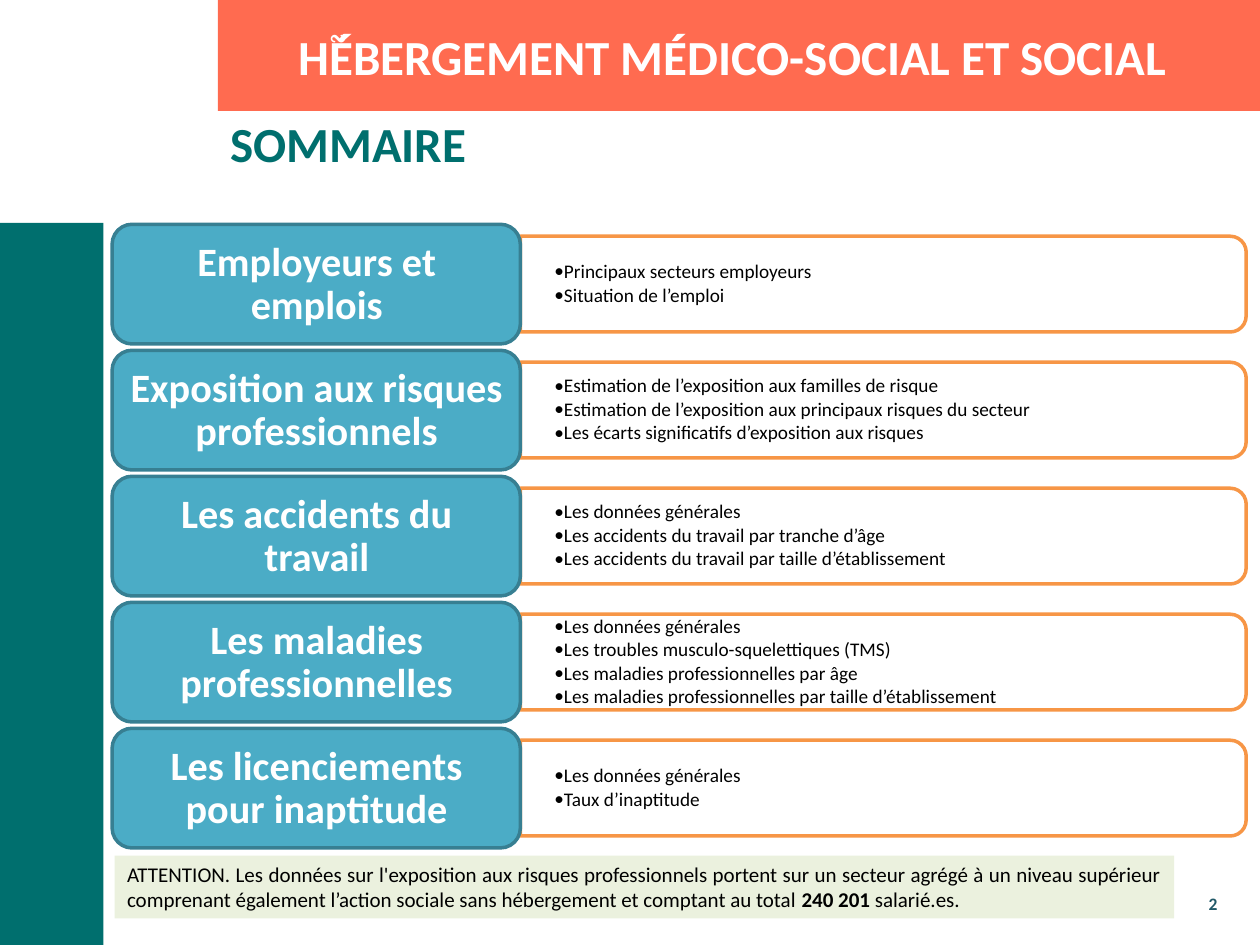
from pptx import Presentation
from pptx.dml.color import RGBColor
from pptx.enum.shapes import MSO_SHAPE
from pptx.enum.text import MSO_ANCHOR, PP_ALIGN
from pptx.oxml.ns import qn
from pptx.util import Inches, Pt
from lxml.etree import SubElement

COLORS = {
    "coral": "FF6B50", "green": "006F6E", "blue": "4BACC6", "blue_edge": "377F92",
    "orange": "F79646", "pale": "EBF1DE", "number": "215968",
    "white": "FFFFFF", "black": "000000",
}

SECTIONS = [
    ("Employeurs et emplois",
     ["Principaux secteurs employeurs", "Situation de l’emploi"]),
    ("Exposition aux risques professionnels",
     ["Estimation de l’exposition aux familles de risque",
      "Estimation de l’exposition aux principaux risques du secteur",
      "Les écarts significatifs d’exposition aux risques"]),
    ("Les accidents du travail",
     ["Les données générales",
      "Les accidents du travail par tranche d’âge",
      "Les accidents du travail par taille d’établissement"]),
    ("Les maladies professionnelles",
     ["Les données générales",
      "Les troubles musculo-squelettiques (TMS)",
      "Les maladies professionnelles par âge",
      "Les maladies professionnelles par taille d’établissement"]),
    ("Les licenciements pour inaptitude",
     ["Les données générales", "Taux d’inaptitude"]),
]

WARNING = [
    ("ATTENTION. Les données sur l'exposition aux risques professionnels portent sur "
     "un secteur agrégé à un niveau supérieur comprenant également l’action sociale "
     "sans hébergement et comptant au total ", False),
    ("240 201", True),
    (" salarié.es.", False),
]


def rgb(name):
    """Return the named colour."""
    return RGBColor.from_string(COLORS[name])


def style(font, size, color, bold=False):
    """Apply the slide's typeface with a size, colour and weight."""
    font.name = "Calibri"
    font.size = Pt(size)
    font.bold = bold
    font.color.rgb = rgb(color)


def add_block(slide, kind, left, top, width, height, fill, edge=None):
    """Add a flat preset shape with an optional outline."""
    block = slide.shapes.add_shape(
        kind, Inches(left), Inches(top), Inches(width), Inches(height))
    block.shadow.inherit = False
    block.fill.solid()
    block.fill.fore_color.rgb = rgb(fill)
    if edge:
        block.line.color.rgb = rgb(edge)
        block.line.width = Pt(2)
    else:
        block.line.fill.background()
    return block


def add_text(slide, left, top, width, height):
    """Add an empty wrapping text box."""
    box = slide.shapes.add_textbox(
        Inches(left), Inches(top), Inches(width), Inches(height))
    box.text_frame.word_wrap = True
    return box


def set_insets(frame, horizontal, vertical):
    """Centre the text vertically inside symmetric margins."""
    frame.vertical_anchor = MSO_ANCHOR.MIDDLE
    frame.margin_left = frame.margin_right = Inches(horizontal)
    frame.margin_top = frame.margin_bottom = Inches(vertical)


def add_line(slide, text, box, size, color, align=PP_ALIGN.LEFT):
    """Add a bold paragraph in its own box and return its frame."""
    frame = add_text(slide, *box).text_frame
    paragraph = frame.paragraphs[0]
    paragraph.text = text
    paragraph.alignment = align
    style(paragraph.runs[0].font, size, color, bold=True)
    return frame


def add_topics(slide, topics, left, top, width, height):
    """Add the outlined band and its bulleted topics."""
    middle_x, middle_y = left + width / 2, top + height / 2
    band = add_block(slide, MSO_SHAPE.ROUND_2_SAME_RECTANGLE, middle_x - height / 2,
                     middle_y - width / 2, height, width, "white", "orange")
    band.rotation = 90

    frame = add_text(slide, left, top + 0.04, width - 0.04, height - 0.08).text_frame
    set_insets(frame, 0.27, 0.14)
    frame.text = "\n".join(topics)
    for paragraph in frame.paragraphs:
        paragraph.level = 1
        paragraph.line_spacing = 0.9
        paragraph.space_after = Pt(1.5)
        properties = paragraph._p.get_or_add_pPr()
        properties.set("marL", str(Inches(0.06)))
        properties.set("indent", str(Inches(-0.06)))
        SubElement(properties, qn("a:buFont"), typeface="Calibri")
        SubElement(properties, qn("a:buChar"), char="•")
        style(paragraph.runs[0].font, 11, "black")


def add_section(slide, heading, topics, left, top, width, height):
    """Add one summary row: its topics and the heading over their left end."""
    heading_width = 3.24
    inset = height / 10
    add_topics(slide, topics, left + heading_width, top + inset,
               width - heading_width, height - 2 * inset)
    add_block(slide, MSO_SHAPE.ROUNDED_RECTANGLE, left, top,
              heading_width, height, "blue", "blue_edge")
    label_box = (left + 0.05, top + 0.05, heading_width - 0.09, height - 0.09)
    frame = add_line(slide, heading, label_box, 23, "white", PP_ALIGN.CENTER)
    set_insets(frame, 0.09, 0.05)
    frame.paragraphs[0].line_spacing = 0.9


def add_summary(slide, left, top, width, row_height, pitch):
    """Stack the summary rows at an even pitch."""
    for index, (heading, topics) in enumerate(SECTIONS):
        add_section(slide, heading, topics, left, top + index * pitch, width, row_height)


def add_header(slide, left, top, width, height):
    """Add the coral banner, its title and the subtitle beneath."""
    add_block(slide, MSO_SHAPE.RECTANGLE, left, top, width, height, "coral")
    add_line(slide, "H֮ÉBERGEMENT MÉDICO-SOCIAL ET SOCIAL",
             (left + 0.54, top + 0.16, width - 0.54, 0.57), 28, "white")
    add_line(slide, "SOMMAIRE", (left, top + height - 0.03, width - 0.02, 0.85),
             28, "green")


def add_warning(slide, left, top, width, height):
    """Add the shaded note on the scope of the data."""
    note = add_text(slide, left, top, width, height)
    note.fill.solid()
    note.fill.fore_color.rgb = rgb("pale")
    paragraph = note.text_frame.paragraphs[0]
    paragraph.alignment = PP_ALIGN.JUSTIFY
    for text, bold in WARNING:
        run = paragraph.add_run()
        run.text = text
        style(run.font, 12, "black", bold)


def main():
    """Build and save the summary slide."""
    presentation = Presentation()
    presentation.slide_width = Inches(10)
    presentation.slide_height = Inches(7.5)
    slide = presentation.slides.add_slide(presentation.slide_layouts[6])

    add_header(slide, 1.73, 0, 8.27, 0.88)
    add_block(slide, MSO_SHAPE.RECTANGLE, 0, 1.77, 0.82, 5.73, "green")
    add_summary(slide, 0.89, 1.78, 9, 0.95, 1)
    add_warning(slide, 0.91, 6.79, 8.41, 0.5)
    add_line(slide, "2", (8.74, 7.04, 1.02, 0.32), 10, "number", PP_ALIGN.RIGHT)

    presentation.save("out.pptx")


if __name__ == "__main__":
    main()
